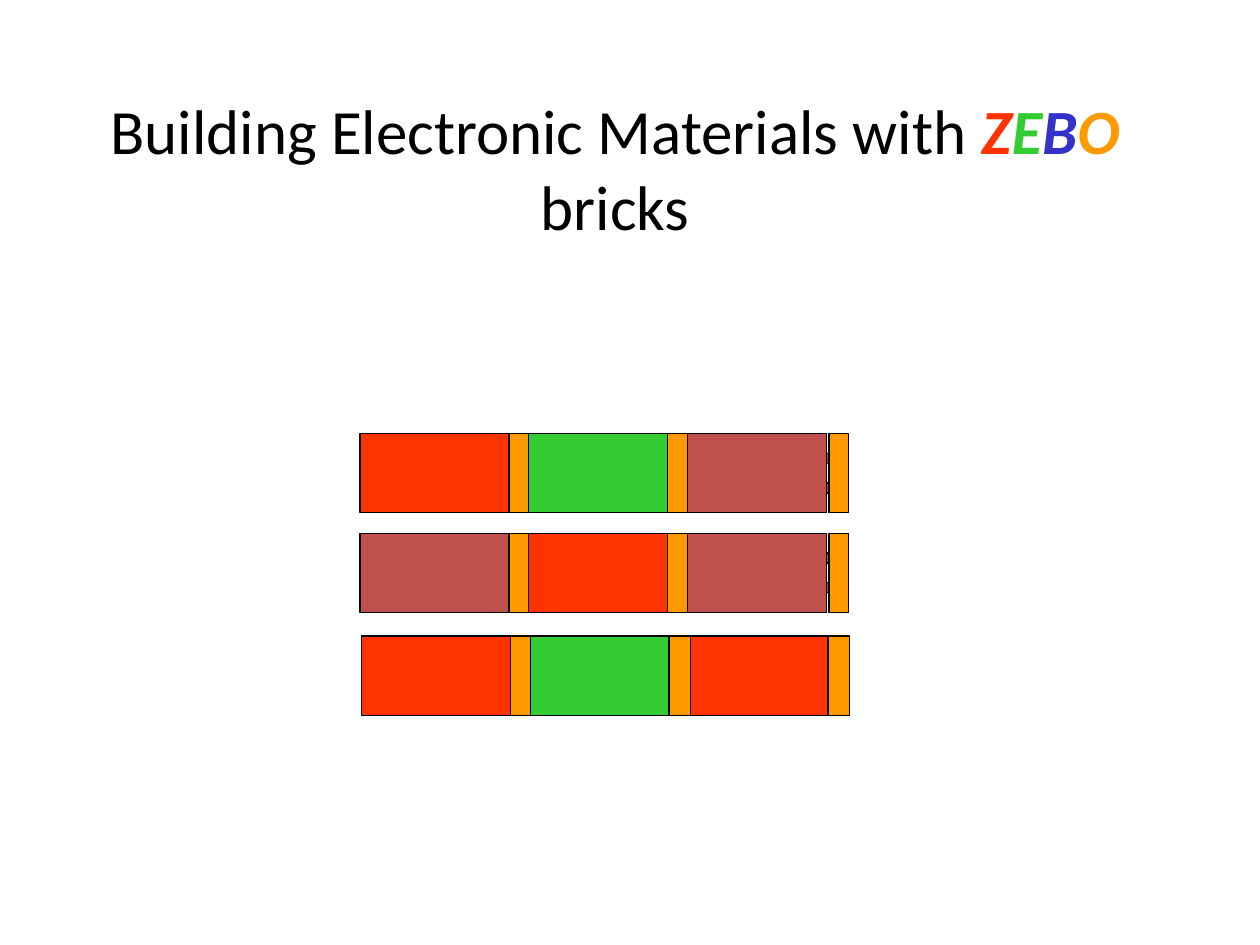
from dataclasses import dataclass

from pptx import Presentation
from pptx.dml.color import RGBColor
from pptx.enum.shapes import MSO_SHAPE
from pptx.enum.text import MSO_AUTO_SIZE, PP_ALIGN
from pptx.util import Cm, Pt


@dataclass(frozen=True)
class Theme:
    font: str = "Calibri"
    title_size: float = 36
    line_width: float = 0.75
    black: str = "000000"
    red: str = "FF3300"
    green: str = "33CC33"
    blue: str = "3333CC"
    orange: str = "FF9900"
    brown: str = "C0504D"


@dataclass(frozen=True)
class Row:
    left: float
    top: float
    colours: tuple[str, str, str]
    end_gap: float = 0
    strip_width: float = 0.4


@dataclass(frozen=True)
class Span:
    text: str
    colour: str
    accent: bool = False


THEME = Theme()
BRICK_HEIGHT = 1.6
FIRST_WIDTH, BRICK_WIDTH = 3.0, 2.8
JOINT_WIDTH = 0.4
SOCKET_HEIGHT, STUD_HEIGHT = 0.4, 0.2
PITCH = SOCKET_HEIGHT + STUD_HEIGHT

ROWS = (
    Row(7.26, 8.74, (THEME.red, THEME.green, THEME.brown), end_gap=0.05),
    Row(7.26, 10.75, (THEME.brown, THEME.red, THEME.brown), end_gap=0.05),
    Row(7.29, 12.82, (THEME.red, THEME.green, THEME.red), strip_width=0.43),
)
TITLE = (
    Span("Building Electronic Materials with ", THEME.black),
    Span("Z", THEME.red, True),
    Span("E", THEME.green, True),
    Span("B", THEME.blue, True),
    Span("O", THEME.orange, True),
    Span(" bricks", THEME.black),
)


def add_block(shapes, left: float, top: float, width: float, height: float, colour: str) -> None:
    block = shapes.add_shape(MSO_SHAPE.RECTANGLE, Cm(left), Cm(top), Cm(width), Cm(height))
    block.shadow.inherit = False
    block.fill.solid()
    block.fill.fore_color.rgb = RGBColor.from_string(colour)
    block.line.color.rgb = RGBColor.from_string(THEME.black)
    block.line.width = Pt(THEME.line_width)


def add_brick(page, left: float, top: float, width: float, colour: str, sockets: bool) -> None:
    shapes = page.shapes.add_group_shape().shapes
    add_block(shapes, left, top, width, BRICK_HEIGHT, colour)
    if sockets:
        for index in range(3):
            add_block(shapes, left - JOINT_WIDTH, top + index * PITCH,
                      JOINT_WIDTH, SOCKET_HEIGHT, colour)
    for index in range(2):
        add_block(shapes, left + width, top + SOCKET_HEIGHT + index * PITCH,
                  JOINT_WIDTH, STUD_HEIGHT, colour)


def add_row(page, row: Row) -> None:
    first, second, third = row.colours
    first_joint = row.left + FIRST_WIDTH
    second_joint = first_joint + JOINT_WIDTH + BRICK_WIDTH
    end_joint = second_joint + JOINT_WIDTH + BRICK_WIDTH

    add_brick(page, row.left, row.top, FIRST_WIDTH, first, False)
    add_brick(page, first_joint + JOINT_WIDTH, row.top, BRICK_WIDTH, second, True)
    add_block(page.shapes, first_joint, row.top, JOINT_WIDTH, BRICK_HEIGHT, THEME.orange)
    add_brick(page, second_joint + JOINT_WIDTH, row.top, BRICK_WIDTH, third, True)
    for joint in (end_joint + row.end_gap, second_joint):
        add_block(page.shapes, joint, row.top, row.strip_width, BRICK_HEIGHT, THEME.orange)


def add_title(page, spans: tuple[Span, ...]) -> None:
    box = page.shapes.add_textbox(Cm(1.3), Cm(1.73), Cm(22.2), Cm(3.3))
    frame = box.text_frame
    frame.word_wrap = True
    frame.auto_size = MSO_AUTO_SIZE.SHAPE_TO_FIT_TEXT
    para = frame.paragraphs[0]
    para.alignment = PP_ALIGN.CENTER
    for span in spans:
        run = para.add_run()
        run.text = span.text
        run.font.name = THEME.font
        run.font.size = Pt(THEME.title_size)
        run.font.bold = run.font.italic = span.accent
        run.font.color.rgb = RGBColor.from_string(span.colour)


def main() -> None:
    deck = Presentation()
    deck.slide_width, deck.slide_height = Cm(25.4), Cm(19.05)
    page = deck.slides.add_slide(deck.slide_layouts[6])
    for row in ROWS:
        add_row(page, row)
    add_title(page, TITLE)
    deck.save("out.pptx")


if __name__ == "__main__":
    main()
